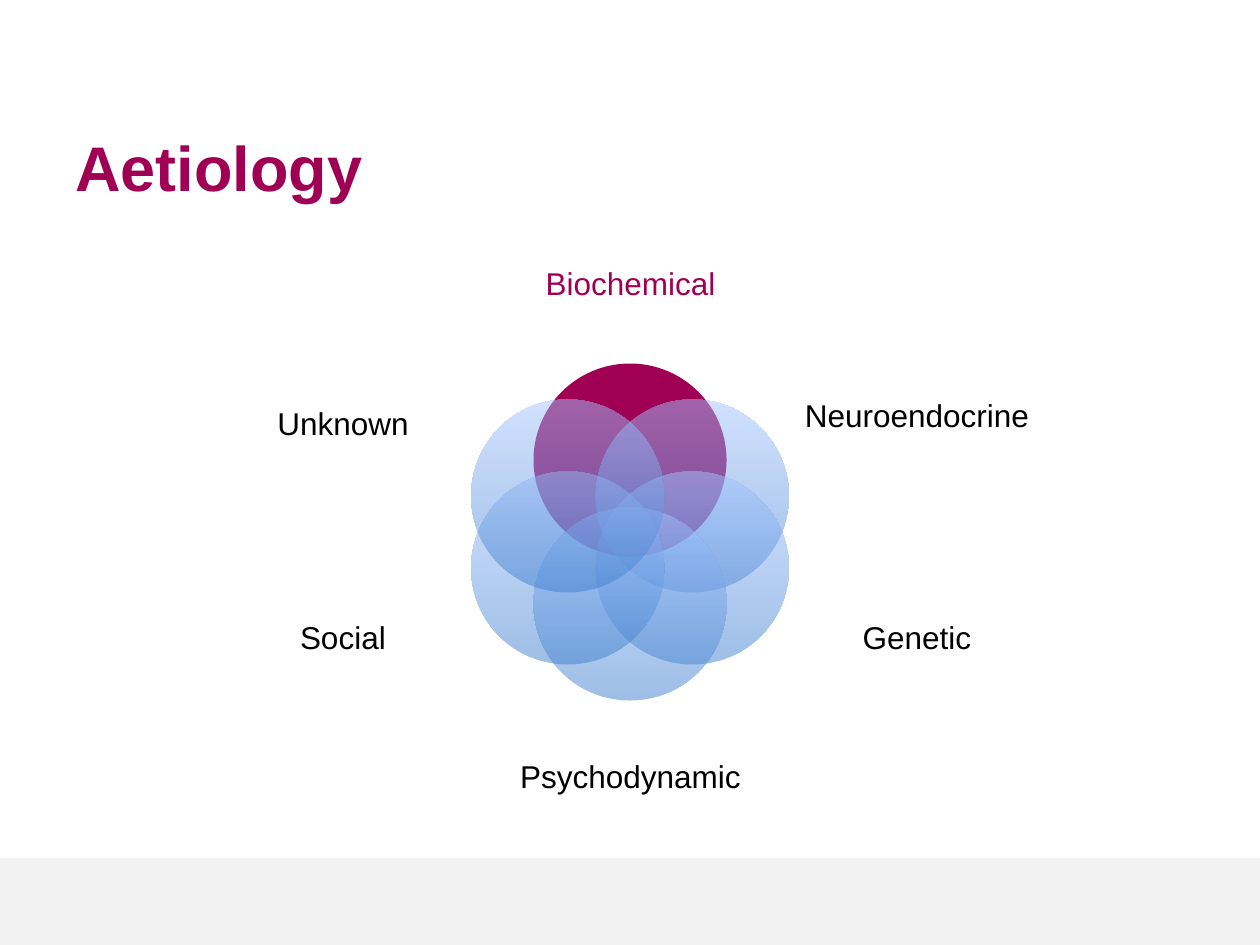
"""Build the Aetiology slide: six overlapping circles with a label beside each."""
from dataclasses import dataclass
from math import cos, radians, sin

from lxml import etree
from pptx import Presentation
from pptx.dml.color import RGBColor
from pptx.enum.shapes import MSO_SHAPE
from pptx.enum.text import MSO_ANCHOR, PP_ALIGN
from pptx.oxml.ns import qn
from pptx.util import Emu, Pt

RECT, OVAL = MSO_SHAPE.RECTANGLE, MSO_SHAPE.OVAL
TOP, MIDDLE = MSO_ANCHOR.TOP, MSO_ANCHOR.MIDDLE
LEFT, CENTER = PP_ALIGN.LEFT, PP_ALIGN.CENTER
EMU_PER_PX = 914400 / 126


@dataclass(frozen=True)
class Theme:
    """Colours, font and type sizes."""
    accent: str = "A00054"
    text: str = "000000"
    band: str = "F2F2F2"
    gradient: tuple = ("3F7FCE", "A4C4FF")
    opacity: int = 50
    font: str = "Arial"
    title_size: int = 36
    label_size: int = 18


THEME = Theme()
CENTRE_X, CENTRE_Y, ORBIT, DIAMETER = 630, 532, 72, 193
FACTORS = [
    ("Biochemical", (510, 220, 241, 131)),
    ("Neuroendocrine", (803, 345, 228, 144)),
    ("Genetic", (803, 559, 228, 160)),
    ("Psychodynamic", (510, 713, 241, 131)),
    ("Social", (229, 559, 228, 160)),
    ("Unknown", (229, 345, 228, 160)),
]


def px(value):
    """Convert pixels to EMU."""
    return Emu(round(value * EMU_PER_PX))


def set_all(target, values):
    """Set several attributes on one object."""
    for name, value in values.items():
        setattr(target, name, value)


def add_shape(slide, kind, box, color=None):
    """Add an unlined shape, solid or with the translucent gradient."""
    sp = slide.shapes.add_shape(kind, *map(px, box))
    sp.shadow.inherit = False
    sp.line.fill.background()
    if color:
        sp.fill.solid()
        sp.fill.fore_color.rgb = RGBColor.from_string(color)
    else:
        fill_gradient(sp)


def fill_gradient(sp):
    """Fill a shape from bottom to top with the translucent gradient."""
    sp.fill.gradient()
    sp.fill.gradient_angle = 90
    for stop, color in zip(sp.fill.gradient_stops, THEME.gradient):
        stop.color.rgb = RGBColor.from_string(color)
    for clr in sp._element.spPr.iter(qn("a:srgbClr")):
        etree.SubElement(clr, qn("a:alpha"), val=str(THEME.opacity * 1000))


def add_text(slide, text, box, color, size, frame, para, bold=False):
    """Add a one-paragraph text box."""
    tf = slide.shapes.add_textbox(*map(px, box)).text_frame
    set_all(tf, {"word_wrap": True, **frame})
    p = tf.paragraphs[0]
    set_all(p, para)
    r = p.add_run()
    r.text = text
    set_all(r.font, {"name": THEME.font, "size": Pt(size), "bold": bold})
    r.font.color.rgb = RGBColor.from_string(color)


def add_factors(slide):
    """Place the circles around the centre, each with its label."""
    frame = {"vertical_anchor": MIDDLE}
    frame |= {f"margin_{side}": 0 for side in ("left", "top", "right", "bottom")}
    para = {"alignment": CENTER, "line_spacing": 0.9}
    for i, (label, box) in enumerate(FACTORS):
        angle = radians(360 / len(FACTORS) * i - 90)
        left = CENTRE_X + ORBIT * cos(angle) - DIAMETER / 2
        top = CENTRE_Y + ORBIT * sin(angle) - DIAMETER / 2
        add_shape(slide, OVAL, (left, top, DIAMETER, DIAMETER),
                  THEME.accent if i == 0 else None)
        add_text(slide, label, box, THEME.accent if i == 0 else THEME.text,
                 THEME.label_size, frame, para)


def main():
    """Build and save the slide."""
    prs = Presentation()
    set_all(prs, {"slide_width": px(1260), "slide_height": px(945)})
    slide = prs.slides.add_slide(prs.slide_layouts[6])
    add_shape(slide, RECT, (0, 858, 1260, 87), THEME.band)
    add_text(slide, "Aetiology", (63, 117, 1134, 78), THEME.accent, THEME.title_size,
             {"vertical_anchor": TOP, "margin_top": px(12), "margin_bottom": 0},
             {"alignment": LEFT}, bold=True)
    add_factors(slide)
    prs.save("out.pptx")


if __name__ == "__main__":
    main()
